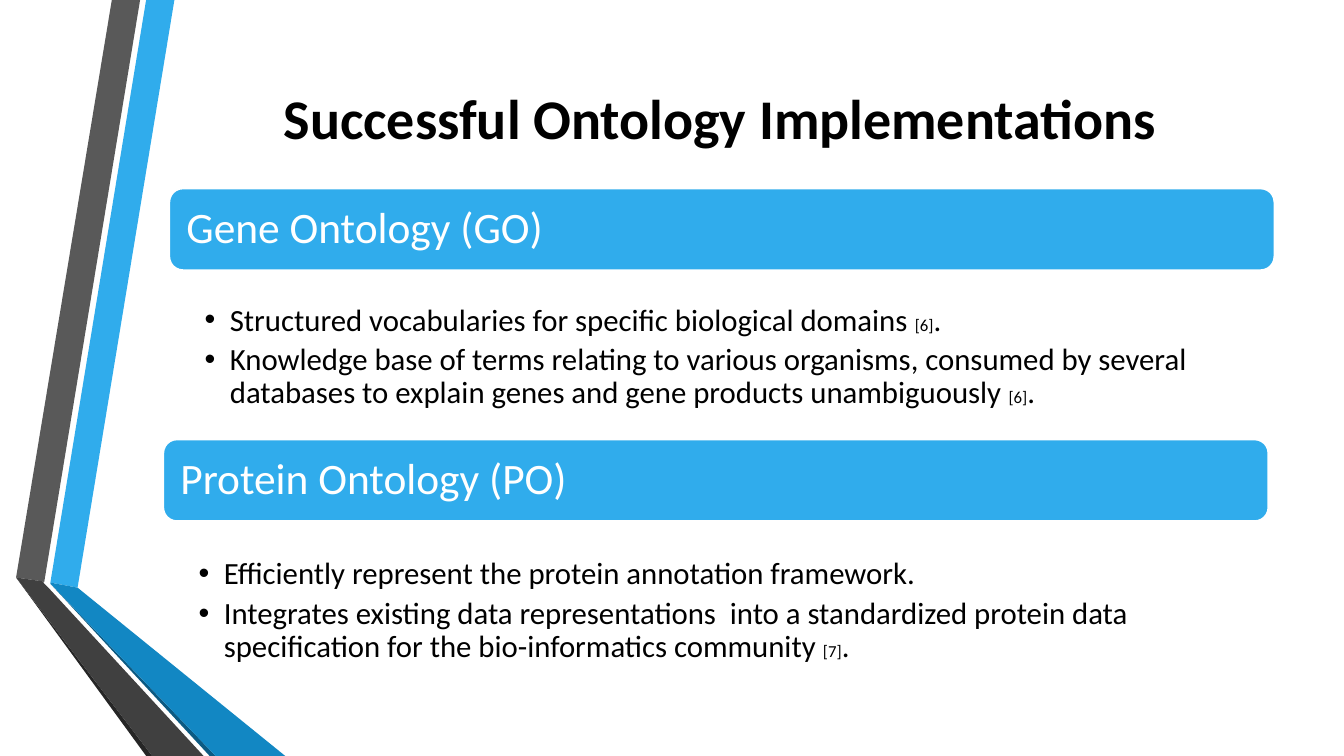
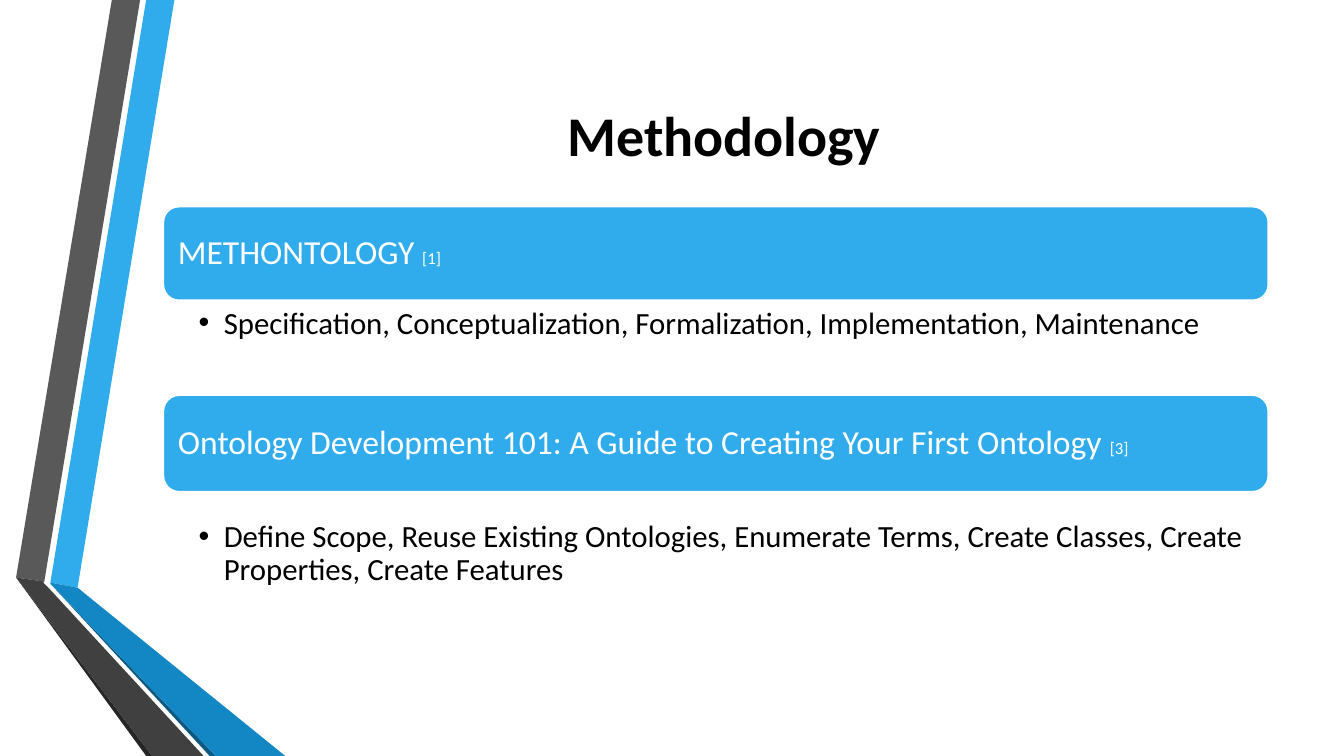
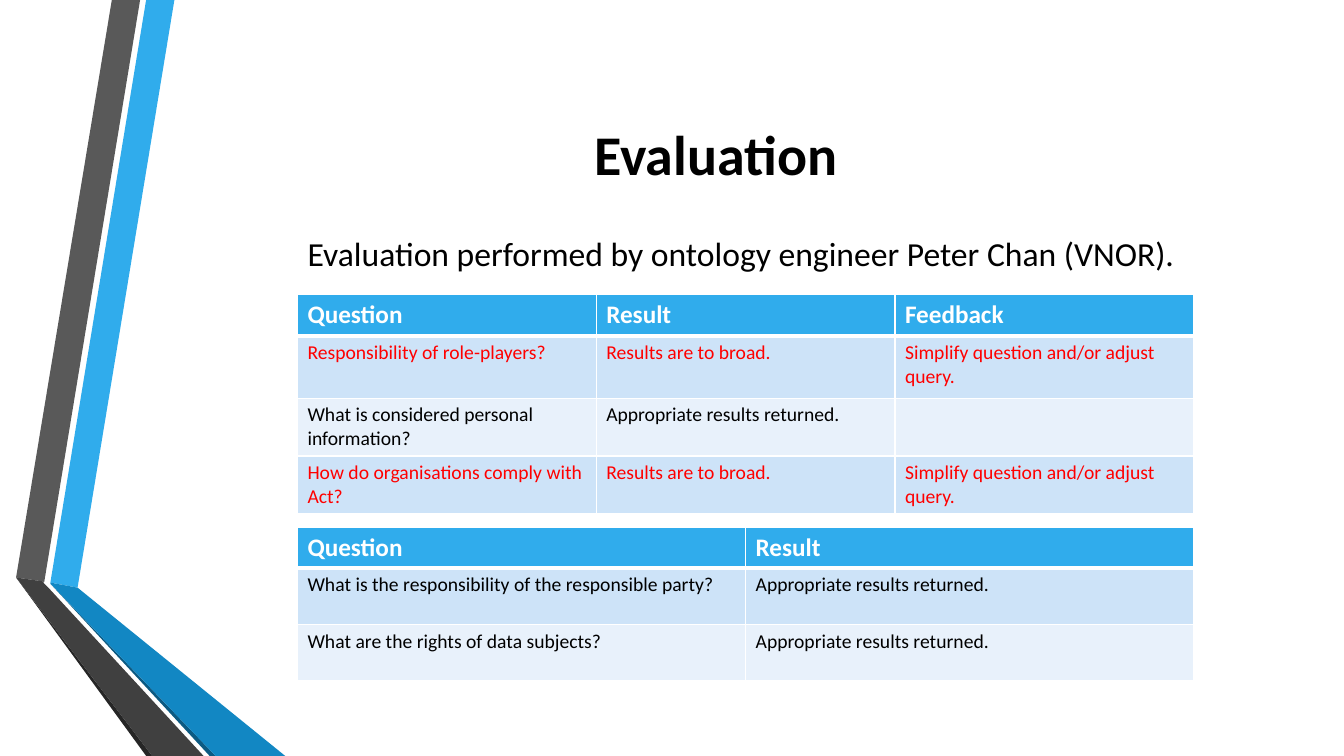
import pptx
import pptx.util
import pptx.dml.color
import pptx.enum.shapes
import pptx.enum.text
import pptx.oxml
import pptx.oxml.ns
import lxml.etree

COLORS = {
    "ink": "000000", "white": "FFFFFF", "red": "FF0000",
    "sky": "30ACEC", "blue": "1287C3", "navy": "0C5A82",
    "gray": "595959", "charcoal": "404040", "coal": "262626",
    "odd": "CDE3F8", "even": "E8F1FB",
}
FONT = "Calibri"
COLS, ROWS = 1333, 750
LEFT, WIDTH = 162, 1096
TABLE_LEFT, TABLE_WIDTH = 295, 889

prs = pptx.Presentation()
prs.slide_height = pptx.util.Inches(7.5)
unit = prs.slide_height // ROWS
prs.slide_width = COLS * unit


def write(p, text, size=22, color="ink", bold=False, align=None, spacing=None, after=0, hang=0, bullet=False):
    p.alignment, p.line_spacing = align, spacing
    p.space_before, p.space_after = pptx.util.Pt(0), pptx.util.Pt(after)
    pPr = p._p.get_or_add_pPr()
    pPr.set("marL", str(hang * unit))
    pPr.set("indent", str(-hang * unit))
    if not bullet:
        lxml.etree.SubElement(pPr, pptx.oxml.ns.qn("a:buNone"))
    for i, piece in enumerate(text.split("|")):
        r = p.add_run()
        r.text = piece
        r.font.name, r.font.bold = FONT, bold
        r.font.size = pptx.util.Pt(12 if i % 2 else size)
        r.font.color.rgb = pptx.dml.color.RGBColor.from_string(COLORS[color])


def place(sp, left, top, width, height, insets=(10, 5, 10, 5), anchor="TOP"):
    sp.left, sp.top, sp.width, sp.height = (v * unit for v in (left, top, width, height))
    tf = sp.text_frame
    tf.word_wrap = True
    tf.auto_size = pptx.enum.text.MSO_AUTO_SIZE.NONE
    tf.vertical_anchor = pptx.enum.text.MSO_ANCHOR[anchor]
    tf.margin_left, tf.margin_top, tf.margin_right, tf.margin_bottom = (v * unit for v in insets)
    return tf


bands = [
    ("sky", [(50, 578), (77, 583), (173, 0), (145, 0)]),
    ("gray", [(139, 0), (111, 0), (16, 573), (44, 577)]),
    ("coal", [(16, 573), (145, 750), (151, 750)]),
    ("navy", [(50, 579), (208, 750), (214, 750)]),
    ("blue", [(50, 579), (214, 750), (283, 750), (77, 583), (50, 578)]),
    ("charcoal", [(202, 750), (48, 583), (43, 578), (44, 577), (16, 573), (151, 750)]),
]
slides = [
    {"title": "Successful Ontology Implementations", "at": (166, 20), "layout": 3, "size": 31, "inset": 13,
     "sections": [
         (168, 187, 81, "Gene Ontology (GO)", 299, 118, [
             "Structured vocabularies for specific biological domains |[6]|.",
             "Knowledge base of terms relating to various organisms, consumed by several databases "
             "to explain genes and gene products unambiguously |[6]|."]),
         (LEFT, 436, 81, "Protein Ontology (PO)", 551, 118, [
             "Efficiently represent the protein annotation framework.",
             "Integrates existing data representations  into a standardized protein data "
             "specification for the bio-informatics community |[7]|."])]},
    {"title": "Methodology", "at": (170, 37), "layout": 3, "size": 24, "inset": 10,
     "sections": [
         (LEFT, 205, 93, "METHONTOLOGY |[1]", 302, 116, [
             "Specification, Conceptualization, Formalization, Implementation, Maintenance"]),
         (LEFT, 392, 96, "Ontology Development 101: A Guide to Creating Your First Ontology |[3]", 514, 116, [
             "Define Scope, Reuse Existing Ontologies, Enumerate Terms, Create Classes, "
             "Create Properties, Create Features"])]},
    {"title": "Evaluation", "at": (LEFT, 56), "layout": 1, "sections": []},
]

for page in slides:
    s = prs.slides.add_slide(prs.slide_layouts[page["layout"]])
    tf = place(s.shapes.title, *page["at"], WIDTH, 192, anchor="MIDDLE")
    write(tf.paragraphs[0], page["title"], size=40, bold=True, align=pptx.enum.text.PP_ALIGN.CENTER)
    for n, (left, top, height, heading, list_top, list_height, items) in enumerate(page["sections"], 1):
        sp = s.shapes.add_shape(pptx.enum.shapes.MSO_SHAPE.ROUNDED_RECTANGLE, 0, 0, unit, unit)
        sp.shadow.inherit = False
        sp.fill.solid()
        sp.fill.fore_color.rgb = pptx.dml.color.RGBColor.from_string(COLORS["sky"])
        sp.line.color.rgb = pptx.dml.color.RGBColor.from_string(COLORS["white"])
        sp.line.width = pptx.util.Pt(1.25)
        tf = place(sp, left, top, WIDTH, height, [page["inset"]] * 4, "MIDDLE")
        write(tf.paragraphs[0], heading, size=page["size"], color="white",
              align=pptx.enum.text.PP_ALIGN.LEFT, spacing=0.9)
        tf = place(s.placeholders[n], left, list_top, WIDTH, list_height, (35, 3, 17, 3))
        for i, item in enumerate(items):
            p = tf.add_paragraph() if i else tf.paragraphs[0]
            write(p, item, spacing=0.9, after=4.4, hang=25, bullet=True)

tf = place(s.placeholders[1], TABLE_LEFT, 226, TABLE_WIDTH, 50)
write(tf.paragraphs[0], "Evaluation performed by ontology engineer Peter Chan (VNOR).", size=24)

broad = ["Results are to broad.", "Simplify question and/or adjust query."]
good = "Appropriate results returned."
tables = [
    (292, [41, 62, 41, 41], [
        ["Question", "Result", "Feedback"],
        ["Responsibility of role-players?", *broad],
        ["What is considered personal information?", good, ""],
        ["How do organisations comply with Act?", *broad]]),
    (523, [36, 56, 56], [
        ["Question", "Result"],
        ["What is the responsibility of the responsible party?", good],
        ["What are the rights of data subjects?", good]]),
]
for top, heights, rows in tables:
    count = len(rows[0])
    frame = s.shapes.add_table(len(rows), count, TABLE_LEFT * unit, top * unit,
                               TABLE_WIDTH * unit, sum(heights) * unit)
    table = frame.table
    for col in table.columns:
        col.width = TABLE_WIDTH * unit // count
    for i, row in enumerate(rows):
        table.rows[i].height = heights[i] * unit
        for j, text in enumerate(row):
            cell = table.cell(i, j)
            fill = "sky" if i == 0 else "odd" if i % 2 else "even"
            cell.fill.solid()
            cell.fill.fore_color.rgb = pptx.dml.color.RGBColor.from_string(COLORS[fill])
            color = "white" if i == 0 else "red" if broad[0] in row else "ink"
            if text:
                write(cell.text_frame.paragraphs[0], text, size=14 if i else 18, color=color, bold=i == 0)
            tcPr = cell._tc.get_or_add_tcPr()
            for k, side in enumerate("LRTB"):
                thick = (i, side) in [(0, "B"), (1, "T")]
                ln = pptx.oxml.parse_xml(
                    f'<a:ln{side} {pptx.oxml.ns.nsdecls("a")} w="{pptx.util.Pt(3 if thick else 1)}">'
                    f'<a:solidFill><a:srgbClr val="{COLORS["white"]}"/></a:solidFill></a:ln{side}>')
                tcPr.insert(k, ln)

tree = prs.slide_master.shapes._spTree
for i, (color, points) in enumerate(bands):
    builder = s.shapes.build_freeform(*points[0], scale=unit)
    builder.add_line_segments(points[1:], close=True)
    sp = builder.convert_to_shape()
    sp.shadow.inherit = False
    sp.fill.solid()
    sp.fill.fore_color.rgb = pptx.dml.color.RGBColor.from_string(COLORS[color])
    sp.line.fill.background()
    sp._element.nvSpPr.cNvPr.set("id", str(100 + i))
    tree.insert(2 + i, sp._element)

prs.save("out.pptx")
